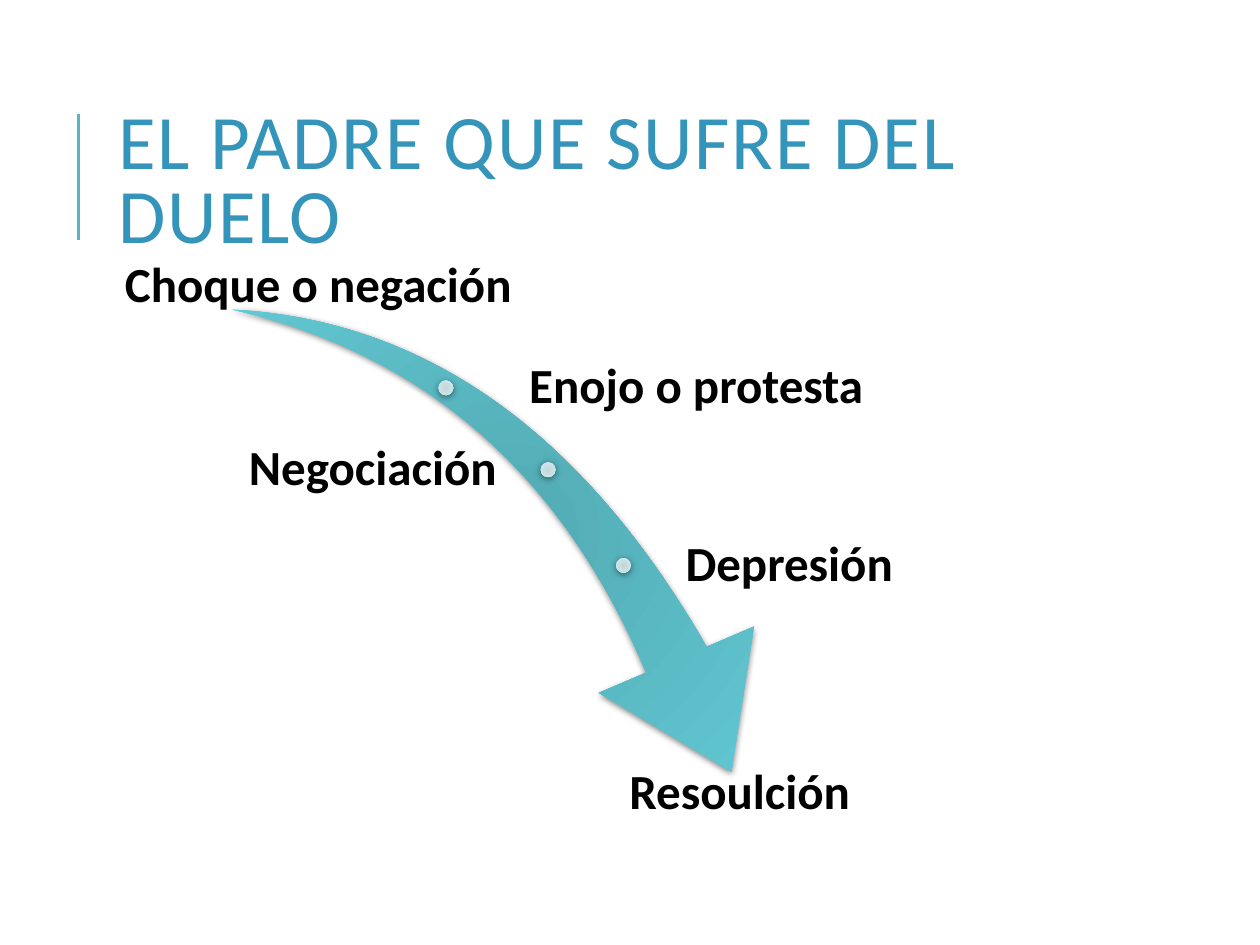
from lxml import etree
from pptx import Presentation
from pptx.dml.color import RGBColor
from pptx.enum import shapes, text
from pptx.oxml import parse_xml
from pptx.oxml.ns import nsdecls, qn
from pptx.util import Cm, Pt

HUES = {
    "title": "3494BA", "rule": "58B6C0", "ink": "000000",
    "arrow": ("52AAB3", "65CFDB"), "dot": ("C3D6D9", "D1ECF0"),
}
FONT = "Calibri"
LEFT, MID, RIGHT = text.PP_ALIGN.LEFT, text.PP_ALIGN.CENTER, text.PP_ALIGN.RIGHT
TOP, CORE, BASE = (text.MSO_ANCHOR.TOP, text.MSO_ANCHOR.MIDDLE,
                   text.MSO_ANCHOR.BOTTOM)
TITLE = "EL PADRE QUE SUFRE DEL DUELO"

# Lengths in cm. Ends: words, left, top, width, anchor
ENDS = [
    ("Choque o negación", 2.06, 4.24, 8.71, BASE),
    ("Resoulción", 11.15, 15.37, 7.52, TOP),
]
# Steps: words, dot centre, label left, label width, alignment
STEPS = [
    ("Enojo o protesta", (8.99, 7.82), 10.57, 8.13, LEFT),
    ("Negociación", (11.05, 9.47), 3.63, 6.48, RIGHT),
    ("Depresión", (12.57, 11.4), 13.72, 4.98, LEFT),
]
TALL, DOT, PAD = 2.18, 0.3, 0.1


def write(words, box, size, hue, align, anchor, gap, pad=None):
    item = slide.shapes.add_textbox(*map(Cm, box))
    frame = item.text_frame
    frame.text = words
    frame.word_wrap = True
    frame.vertical_anchor = anchor
    if pad is not None:
        frame.margin_left = frame.margin_right = Cm(pad)
        frame.margin_top = frame.margin_bottom = Cm(pad)
    para = frame.paragraphs[0]
    para.alignment = align
    para.line_spacing = gap
    font = para.runs[0].font
    font.name, font.size = FONT, Pt(size)
    font.color.rgb = RGBColor.from_string(HUES[hue])
    return font


def label(words, left, top, width, align, anchor):
    box = (left, top, width, TALL)
    write(words, box, 28, "ink", align, anchor, 0.9, PAD).bold = True


def glow(kind, box, hue):
    """Add a shape with a radial gradient and a soft shadow."""
    item = slide.shapes.add_shape(kind, *map(Cm, box))
    item.line.fill.background()
    item.fill.gradient()
    for stop, tone in zip(item.fill.gradient_stops, HUES[hue]):
        stop.color.rgb = RGBColor.from_string(tone)
    props = item._element.spPr
    lin = props.find(".//" + qn("a:lin"))
    lin.getparent().replace(lin, parse_xml(
        f'<a:path {nsdecls("a")} path="circle"><a:fillToRect l="100000" '
        't="100000" r="100000" b="100000"/></a:path>'))
    item.shadow.inherit = False
    props.find(qn("a:effectLst")).append(parse_xml(
        f'<a:outerShdw {nsdecls("a")} blurRad="{Pt(4)}" dist="{Pt(1)}" '
        'dir="5400000" rotWithShape="0"><a:srgbClr val="000000">'
        '<a:alpha val="50000"/></a:srgbClr></a:outerShdw>'))
    return item


deck = Presentation()
deck.slide_width, deck.slide_height = Cm(25.4), Cm(19.05)
slide = deck.slides.add_slide(deck.slide_layouts[6])

rule = slide.shapes.add_connector(
    shapes.MSO_CONNECTOR.STRAIGHT, Cm(1.58), Cm(4.83), Cm(1.58), Cm(2.29))
rule.line.color.rgb = RGBColor.from_string(HUES["rule"])
rule.line.width = Pt(1.5)
etree.SubElement(rule._element.spPr, qn("a:effectLst"))

head = write(TITLE, (2.13, 1.63, 20.24, 4.17), 44, "title", LEFT, CORE, 0.8)
head._element.set("spc", "100")

arrow = glow(shapes.MSO_SHAPE.SWOOSH_ARROW, (4.42, 6.6, 11.81, 8.23), "arrow")
arrow.rotation = 73.3
arrow.adjustments[0], arrow.adjustments[1] = 0.16, 0.31

for words, (x, y), left, width, align in STEPS:
    glow(shapes.MSO_SHAPE.OVAL, (x - DOT / 2, y - DOT / 2, DOT, DOT), "dot")
    label(words, left, y - TALL / 2, width, align, CORE)
for words, left, top, width, anchor in ENDS:
    label(words, left, top, width, MID, anchor)

deck.save("out.pptx")
